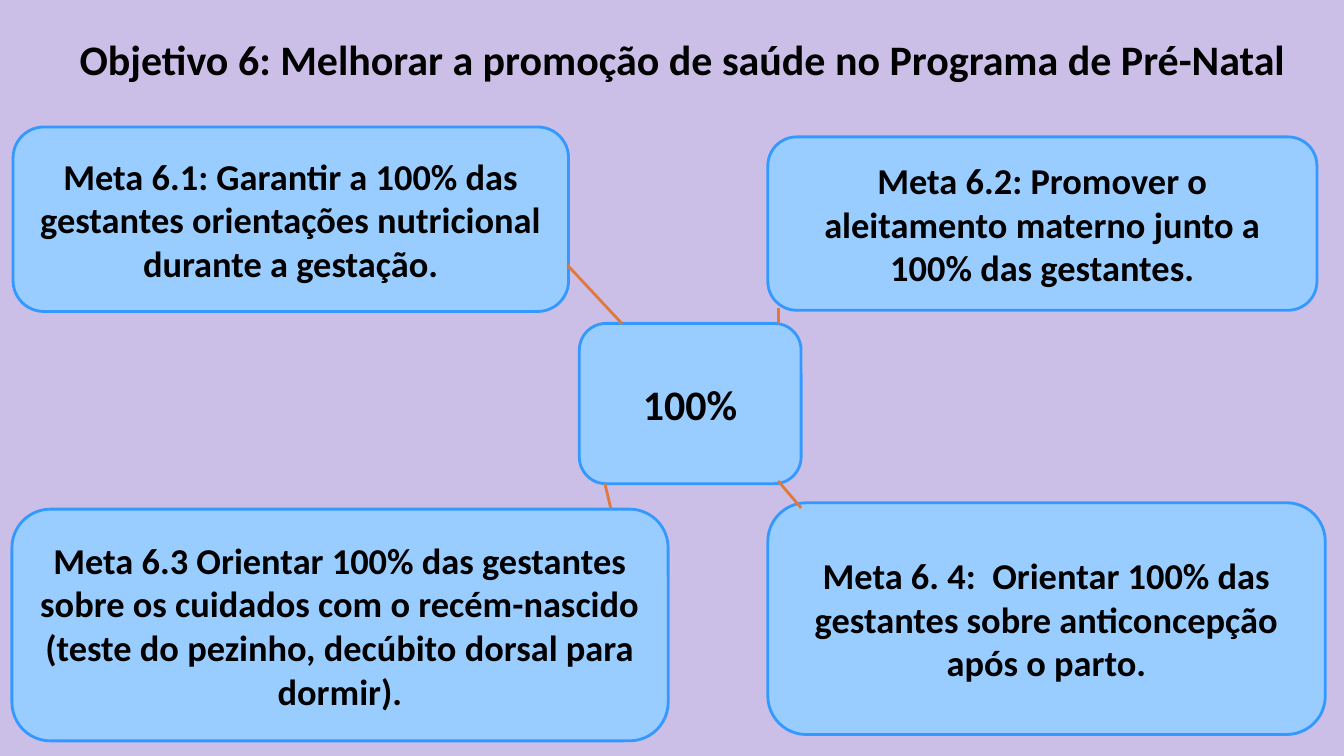
from lxml import etree
from pptx import Presentation
from pptx import util as u
from pptx.dml.color import RGBColor
from pptx.enum import shapes, text
from pptx.oxml.ns import qn

GOALS = [
    ("Meta 6.1: Garantir a 100% das gestantes orientações nutricional "
     "durante a gestação.", (0.33, 3.2, 14, 4.65)),
    ("Meta 6.2: Promover o aleitamento materno junto a 100% das gestantes.",
     (19.35, 3.45, 13.84, 4.37)),
    ("Meta 6.3 Orientar 100% das gestantes sobre os cuidados com o "
     "recém-nascido (teste do pezinho, decúbito dorsal para dormir).",
     (0.3, 12.83, 16.54, 5.84)),
    ("Meta 6. 4:  Orientar 100% das gestantes sobre anticoncepção após o parto.",
     (19.35, 12.67, 14.05, 5.84)),
]
LINKS = [
    (19.61, 12.12, 20.19, 12.8),
    (14.3, 6.68, 15.67, 8.15),
    (19.61, 7.77, 19.61, 8.15),
    (15.24, 12.17, 15.39, 12.8),
]


def cm(values):
    return [u.Cm(v) for v in values]


def paint(color_format, color):
    color_format.rgb = RGBColor.from_string(color)


def set_font(p, size):
    p.font.name = "Calibri"
    p.font.size = u.Pt(size)
    p.font.bold = True
    paint(p.font.color, "000000")


def set_line(sp, color):
    paint(sp.line.color, color)
    sp.line.width = u.Pt(2)


def add_title(s, title):
    sp = s.shapes.title
    sp.left, sp.top, sp.width, sp.height = cm((0.25, 0.08, 33.05, 1.98))
    tf = sp.text_frame
    tf.text = title
    tf.word_wrap = True
    tf.auto_size = text.MSO_AUTO_SIZE.SHAPE_TO_FIT_TEXT
    tf.vertical_anchor = text.MSO_ANCHOR.TOP
    p = tf.paragraphs[0]
    p.alignment = text.PP_ALIGN.JUSTIFY
    p.line_spacing = 1.5
    p.space_before = u.Pt(0)
    pPr = p._p.get_or_add_pPr()
    pPr.set("marL", "0")
    pPr.set("indent", str(u.Cm(1.5)))
    set_font(p, 30)


def add_box(s, words, box, size):
    sp = s.shapes.add_shape(shapes.MSO_SHAPE.ROUNDED_RECTANGLE, *cm(box))
    sp.shadow.inherit = False
    sp.fill.solid()
    paint(sp.fill.fore_color, "99CCFF")
    set_line(sp, "3399FF")
    tf = sp.text_frame
    tf.text = words
    tf.word_wrap = True
    tf.vertical_anchor = text.MSO_ANCHOR.MIDDLE
    p = tf.paragraphs[0]
    p.alignment = text.PP_ALIGN.CENTER
    set_font(p, size)


def add_link(s, ends):
    sp = s.shapes.add_connector(shapes.MSO_CONNECTOR.STRAIGHT, *cm(ends))
    set_line(sp, "E1793C")
    etree.SubElement(sp._element.spPr, qn("a:effectLst"))


def main():
    prs = Presentation()
    prs.slide_width, prs.slide_height = cm((33.87, 19.05))
    s = prs.slides.add_slide(prs.slide_layouts[5])
    s.background.fill.solid()
    paint(s.background.fill.fore_color, "CBBFE8")
    add_title(s, "Objetivo 6: Melhorar a promoção de saúde no Programa de Pré-Natal")
    add_box(s, "100%", (14.6, 8.15, 5.59, 4.04), 30)
    for words, box in GOALS:
        add_box(s, words, box, 26)
    for ends in LINKS:
        add_link(s, ends)
    prs.save("out.pptx")


if __name__ == "__main__":
    main()
